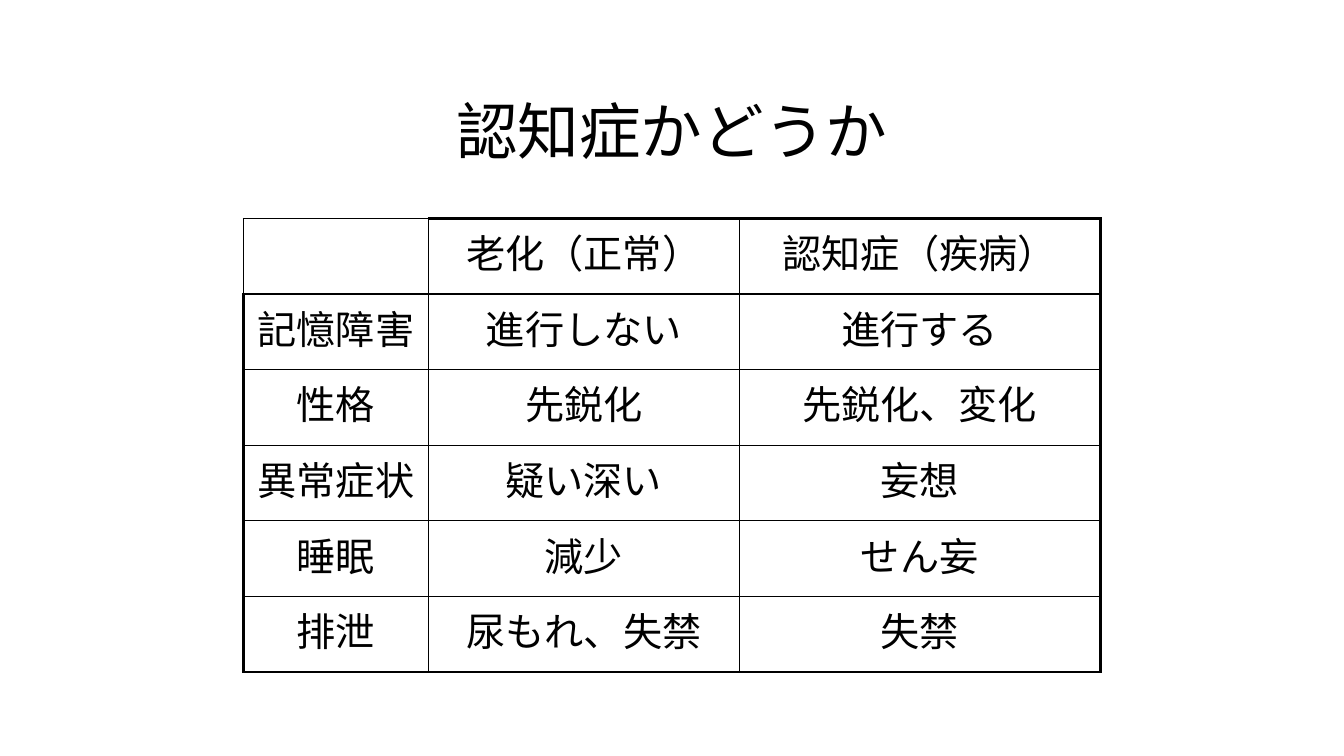
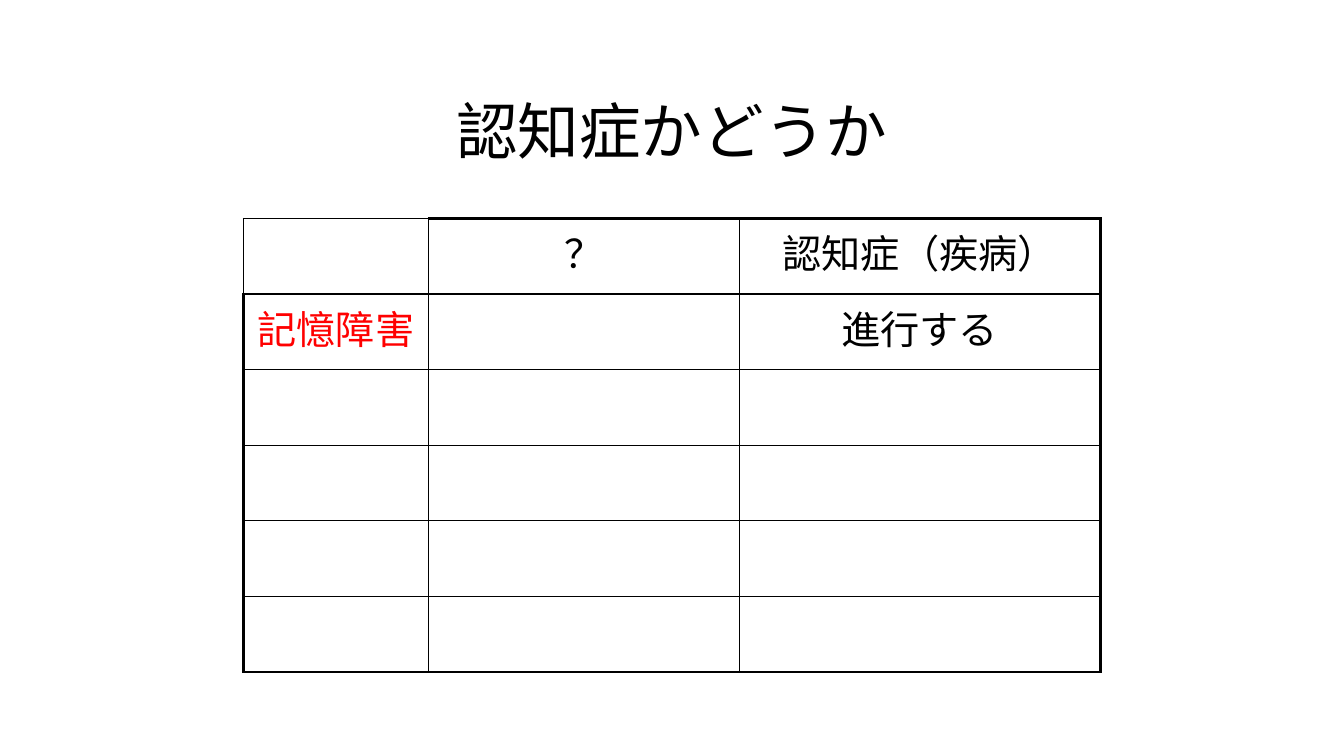
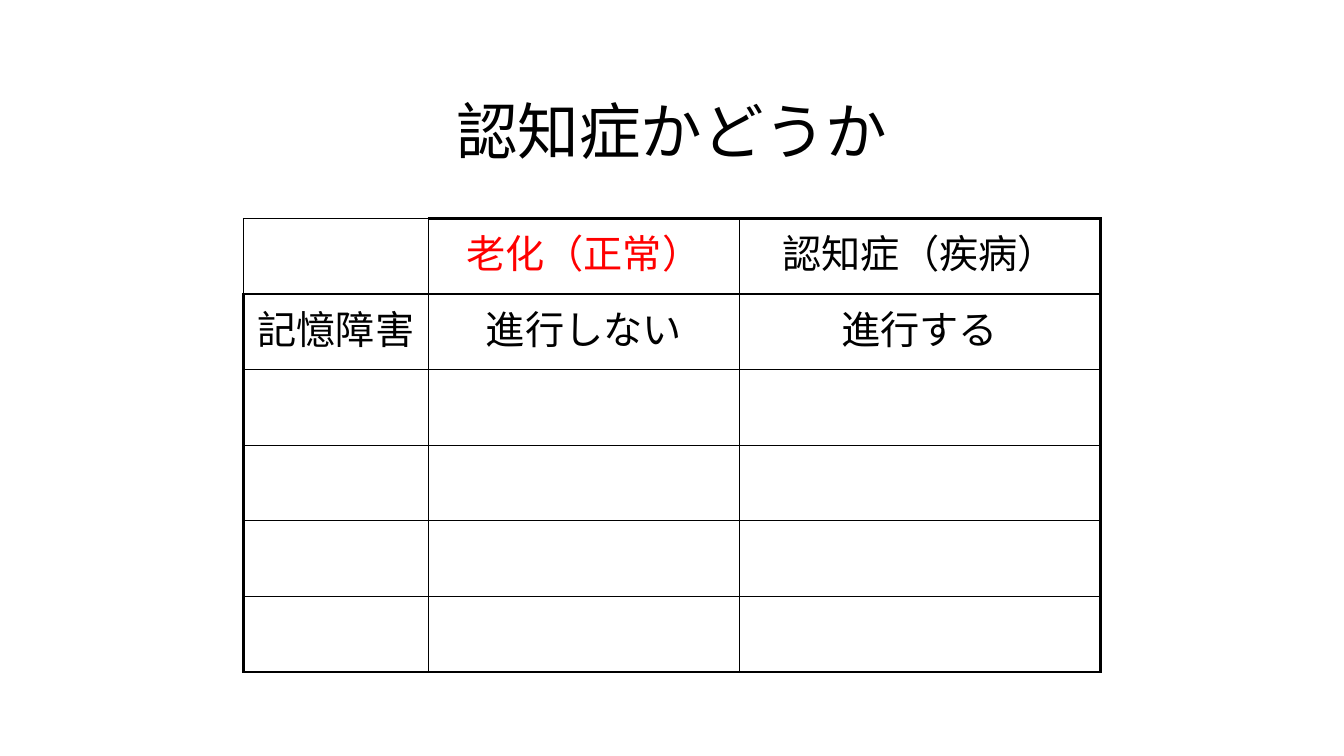
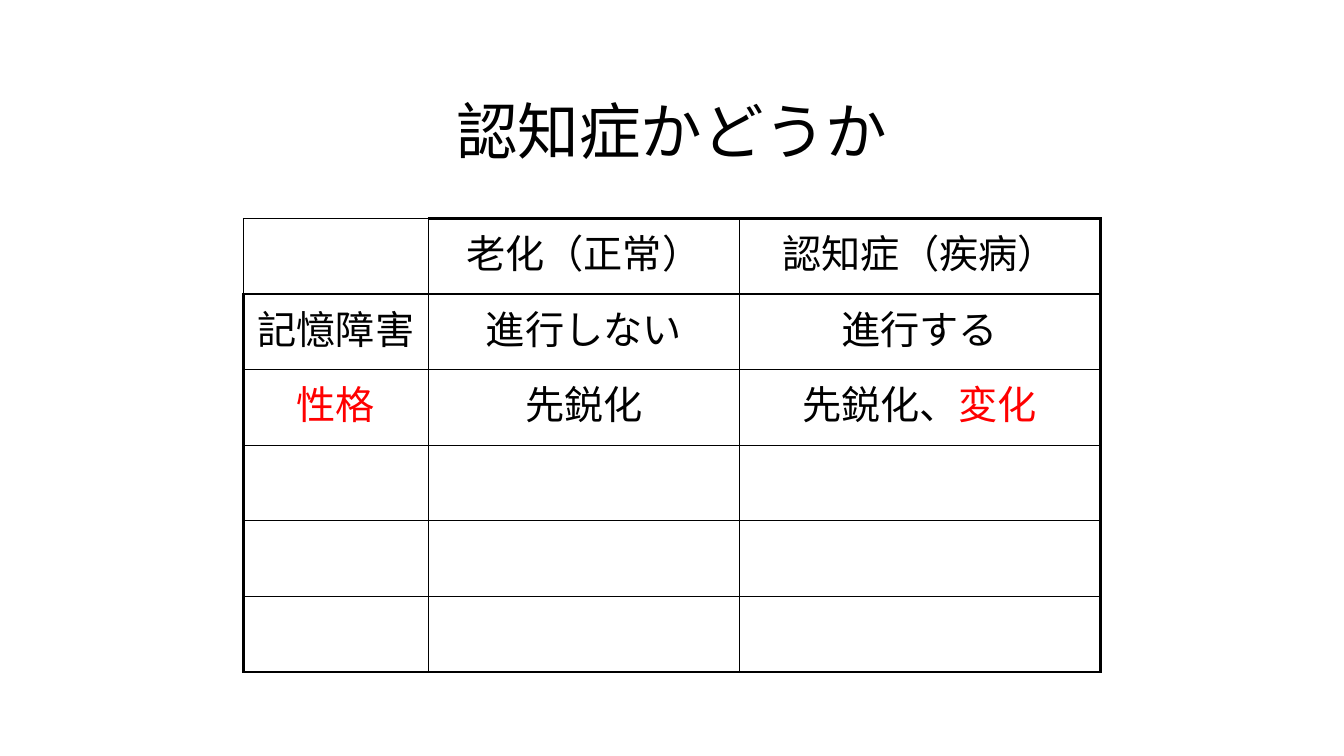
from lxml import etree
from pptx import Presentation
from pptx.dml.color import RGBColor
from pptx.enum.text import MSO_ANCHOR, PP_ALIGN
from pptx.oxml.ns import qn
from pptx.util import Pt

PX = 9525
CENTER = PP_ALIGN.CENTER
MIDDLE = MSO_ANCHOR.MIDDLE
FONT = "Times New Roman"
BLACK = "000000"
RED = "FF0000"
TITLE = "認知症かどうか"
COLUMN_WIDTHS = [176, 296, 344]
ROW_HEIGHT = 72
ROW_COUNT = 6
LAST_COLUMN = len(COLUMN_WIDTHS) - 1
THIN, THICK = 1, 2.25

ROWS = [
    ["", "老化（正常）", "認知症（疾病）"],
    ["記憶障害", "進行しない", "進行する"],
    ["性格", "先鋭化", "先鋭化、変化"],
    ["異常症状", "疑い深い", "妄想"],
    ["睡眠", "減少", "せん妄"],
    ["排泄", "尿もれ、失禁", "失禁"],
]
QUESTION_ROWS = [["", "？", "認知症（疾病）"], ["記憶障害", "", "進行する"]]
PAGES = [
    (ROWS, []),
    (QUESTION_ROWS, ["記憶障害"]),
    (ROWS[:2], ["老化（正常）"]),
    (ROWS[:3], ["性格", "変化"]),
]


def style_paragraph(para, size):
    para.alignment = CENTER
    para.font.name = FONT
    para.font.size = Pt(size)
    para.font.color.rgb = RGBColor.from_string(BLACK)


def add_border(cell, side, width):
    properties = cell._tc.get_or_add_tcPr()
    line = etree.SubElement(properties, qn(f"a:ln{side}"), w=str(Pt(width)))
    fill = etree.SubElement(line, qn("a:solidFill"))
    etree.SubElement(fill, qn("a:srgbClr"), val=BLACK)


deck = Presentation()
deck.slide_width = 1280 * PX
deck.slide_height = 720 * PX
layout = deck.slide_layouts[5]
layout_title = layout.placeholders[0]
layout_title.left, layout_title.top = 96 * PX, 64 * PX
layout_title.width, layout_title.height = 1088 * PX, 120 * PX
layout_title.text_frame.vertical_anchor = MIDDLE

for rows, red_words in PAGES:
    page = deck.slides.add_slide(layout)
    page.shapes.title.text = TITLE
    style_paragraph(page.shapes.title.text_frame.paragraphs[0], 44)

    frame = page.shapes.add_table(
        ROW_COUNT, len(COLUMN_WIDTHS), 232 * PX, 208 * PX,
        sum(COLUMN_WIDTHS) * PX, ROW_COUNT * ROW_HEIGHT * PX)
    table = frame.table
    table.first_row = False
    table.horz_banding = False
    for column, width in zip(table.columns, COLUMN_WIDTHS):
        column.width = width * PX

    for row_index in range(ROW_COUNT):
        table.rows[row_index].height = ROW_HEIGHT * PX
        for column_index in range(len(COLUMN_WIDTHS)):
            cell = table.cell(row_index, column_index)
            corner = row_index == column_index == 0
            outer_sides = {
                "L": column_index == 0 and not corner,
                "R": column_index == LAST_COLUMN,
                "T": row_index == 0 and not corner,
                "B": row_index == ROW_COUNT - 1,
            }
            for side, is_outer in outer_sides.items():
                add_border(cell, side, THICK if is_outer else THIN)
            cell.fill.background()

            text = rows[row_index][column_index] if row_index < len(rows) else ""
            if not text:
                continue
            para = cell.text_frame.paragraphs[0]
            style_paragraph(para, 28)
            spacing = etree.Element(qn("a:spcBef"))
            etree.SubElement(spacing, qn("a:spcPct"), val="20000")
            para._p.get_or_add_pPr().insert(0, spacing)
            red_word = next((word for word in red_words if word in text), "")
            plain = text.removesuffix(red_word)
            if plain:
                para.add_run().text = plain
            if red_word:
                span = para.add_run()
                span.text = red_word
                span.font.color.rgb = RGBColor.from_string(RED)

deck.save("out.pptx")
